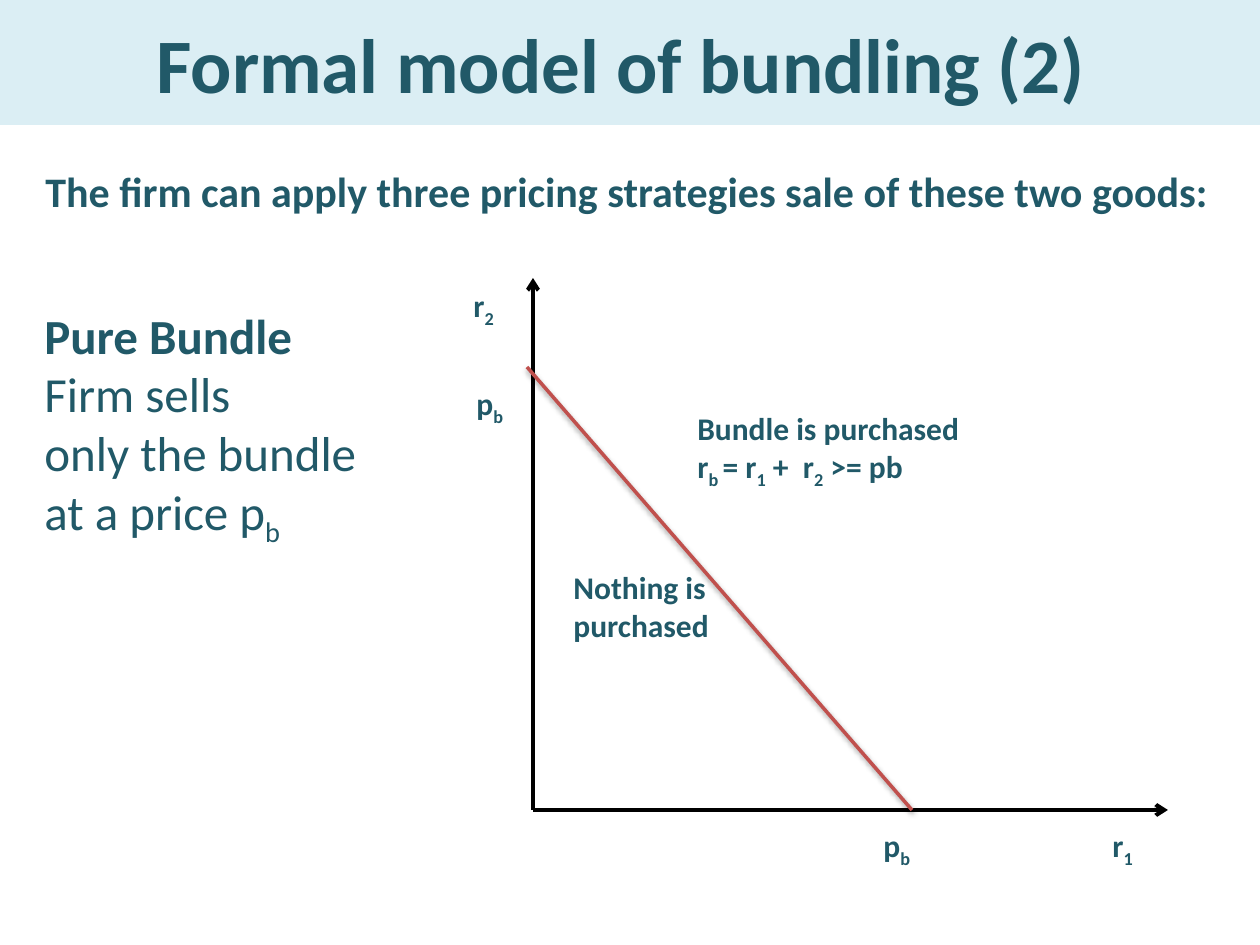
"""Build the slide on the pure bundling strategy."""
from lxml.etree import SubElement
from pptx import Presentation
from pptx.dml.color import RGBColor
from pptx.enum.shapes import MSO_CONNECTOR, MSO_SHAPE
from pptx.enum.text import MSO_ANCHOR, PP_ALIGN
from pptx.oxml.ns import qn
from pptx.util import Pt

EMU_PER_PX = 914400 // 126
FONT = "Calibri"
TEAL = "215968"
PALE_BLUE = "DBEEF4"
BLACK = "000000"
RED = "C0504D"
ORIGIN = (533, 810)


def px(length):
    return length * EMU_PER_PX


def color(value):
    return RGBColor.from_string(value)


def write_text(shape, *lines, size=18, bold=True, align=PP_ALIGN.LEFT,
               anchor=MSO_ANCHOR.TOP, first_bold=False):
    """Fill a shape with lines, where every second part between bars is a subscript."""
    frame = shape.text_frame
    frame.word_wrap = True
    frame.vertical_anchor = anchor
    for index, line in enumerate(lines):
        paragraph = frame.paragraphs[0] if index == 0 else frame.add_paragraph()
        paragraph.alignment = align
        for position, part in enumerate(line.split("|")):
            if not part:
                continue
            run = paragraph.add_run()
            run.text = part
            font = run.font
            font.name, font.size = FONT, Pt(size)
            font.bold = bold or (first_bold and index == 0)
            font.color.rgb = color(TEAL)
            if position % 2:
                font._element.set("baseline", "-25000")


def add_label(slide, box, *lines, **text_format):
    shape = slide.shapes.add_textbox(*map(px, box))
    write_text(shape, *lines, **text_format)


def add_title_band(slide, box, title):
    band = slide.shapes.add_shape(MSO_SHAPE.RECTANGLE, *map(px, box))
    band.shadow.inherit = False
    band.fill.solid()
    band.fill.fore_color.rgb = color(PALE_BLUE)
    band.line.fill.background()
    write_text(band, title, size=44, align=PP_ALIGN.CENTER, anchor=MSO_ANCHOR.MIDDLE)


def add_line(slide, start, end, line_color, width, arrow=False, shadow=False):
    """Draw a straight line with an optional arrowhead at its end or a soft shadow."""
    connector = slide.shapes.add_connector(
        MSO_CONNECTOR.STRAIGHT, *map(px, (*start, *end)))
    connector.line.color.rgb = color(line_color)
    connector.line.width = Pt(width)
    if arrow:
        SubElement(connector.line._get_or_add_ln(), qn("a:tailEnd"), type="arrow")
    effects = SubElement(connector._element.spPr, qn("a:effectLst"))
    if shadow:
        outer = SubElement(effects, qn("a:outerShdw"), blurRad=str(Pt(3.1)),
                           dist=str(Pt(1.6)), dir="5400000", rotWithShape="0")
        shade = SubElement(outer, qn("a:srgbClr"), val=BLACK)
        SubElement(shade, qn("a:alpha"), val="38000")


def add_diagram(slide):
    """Draw the axes, the bundle price line and their labels."""
    for tip in ((ORIGIN[0], 278), (1168, ORIGIN[1])):
        add_line(slide, ORIGIN, tip, BLACK, 2.25, arrow=True)
    add_line(slide, (527, 367), (912, ORIGIN[1]), RED, 2, shadow=True)
    labels = [
        ((1100, 820, 50, 50), ["r|1"]),
        ((461, 280, 50, 50), ["r|2"]),
        ((871, 820, 83, 50), ["p|b"]),
        ((464, 378, 69, 50), ["p|b"]),
        ((685, 403, 459, 127),
         ["Bundle is purchased", "r|b |= r|1| +  r|2| >= pb"]),
        ((561, 562, 198, 89), ["Nothing is purchased"]),
    ]
    for box, lines in labels:
        add_label(slide, box, *lines)


def main():
    presentation = Presentation()
    presentation.slide_width, presentation.slide_height = px(1260), px(945)
    slide = presentation.slides.add_slide(presentation.slide_layouts[6])
    add_label(slide, (33, 159, 1191, 63),
              "The firm can apply three pricing strategies sale of these two goods:",
              size=24)
    add_title_band(slide, (0, 0, 1260, 125), "Formal model of bundling (2) ")
    add_label(slide, (32, 299, 427, 301), "Pure Bundle", "Firm sells",
              "only the bundle", "at a price p|b",
              size=28, bold=False, first_bold=True)
    add_diagram(slide)
    presentation.save("out.pptx")


if __name__ == "__main__":
    main()
